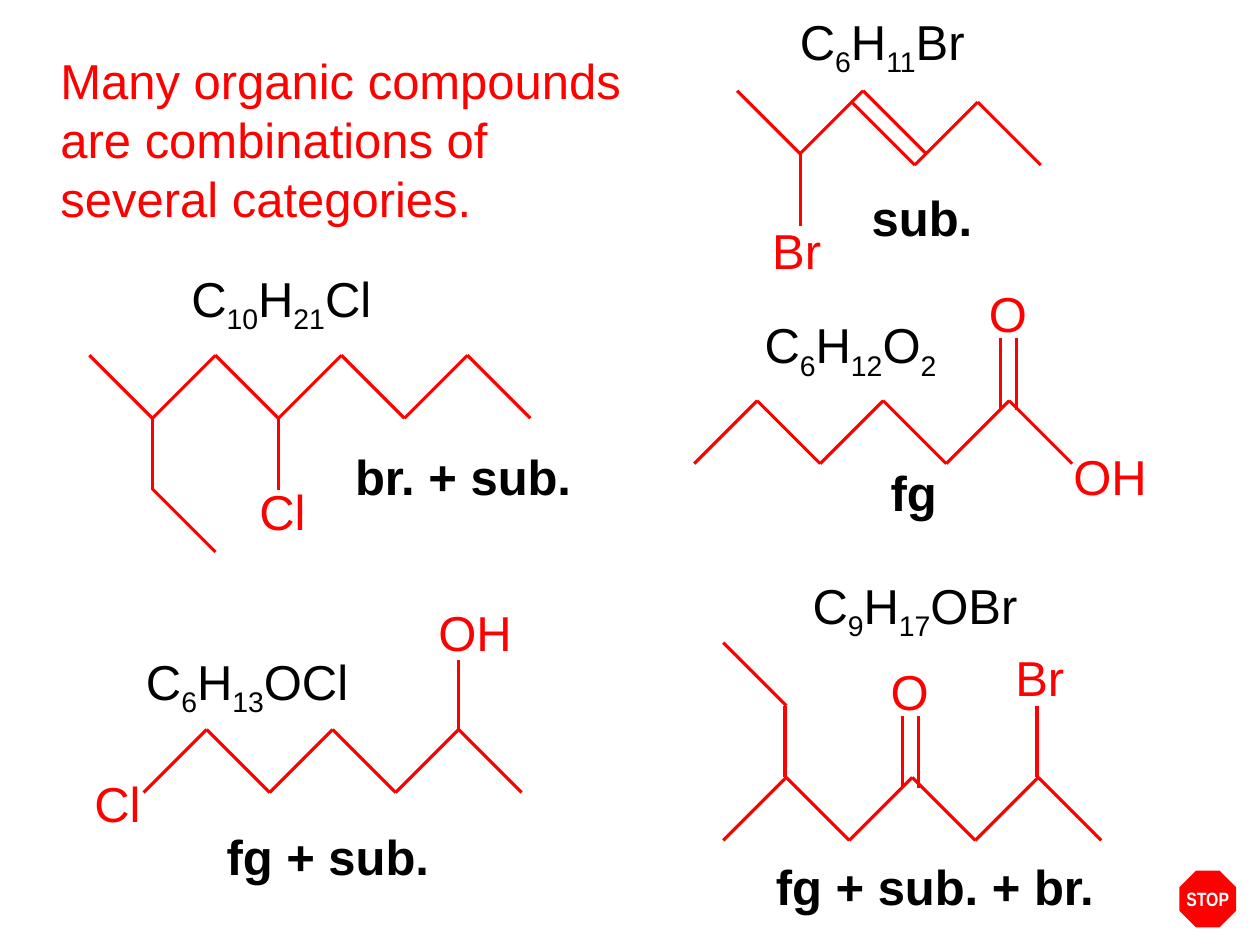
from itertools import groupby

from lxml import etree
from pptx import Presentation
from pptx.dml.color import RGBColor
from pptx.enum import shapes, text
from pptx.oxml.ns import qn
from pptx.util import Inches, Pt

RED, BLACK, WHITE = "FF0000", "000000", "FFFFFF"
STEP = 0.5
BOND = 0.57
LINE_HEIGHT = 0.57

# chains: start and zigzag (u/d = half an inch right and up/down)
# bonds: top of each vertical bond; atoms: left, top, width, symbol
MOLECULES = [
    {"chains": [(0.71, 2.82, "dududud"), (1.21, 3.88, "d")],
     "bonds": [(1.21, 3.32), (2.21, 3.32)],
     "atoms": [(1.96, 3.77, 0.57, "Cl")]},
    {"chains": [(1.14, 6.29, "ududud")],
     "bonds": [(3.64, 5.24)],
     "atoms": [(3.38, 4.73, 0.89, "OH"), (0.65, 6.09, 0.57, "Cl")]},
    {"chains": [(5.51, 3.68, "ududud")],
     "bonds": [(7.94, 2.68), (8.07, 2.68)],
     "atoms": [(7.75, 2.2, 0.5, "O"), (8.42, 3.49, 0.89, "OH")]},
    {"chains": [(5.74, 6.67, "ududud"), (5.74, 5.1, "d")],
     "bonds": [(7.16, 5.68), (7.29, 5.68), (6.23, 5.6), (8.23, 5.6)],
     "atoms": [(6.97, 5.2, 0.5, "O"), (7.96, 5.09, 0.59, "Br")]},
    {"chains": [(5.85, 0.72, "dud"), (6.76, 0.81, "dud")],
     "bonds": [(6.35, 1.22)],
     "atoms": [(6.03, 1.7, 0.59, "Br")]},
]
FORMULAS = [
    (6.25, 0.07, 1.7, "C6H11Br"), (1.42, 2.11, 1.83, "C10H21Cl"),
    (1.06, 5.15, 1.99, "C6H13OCl"), (5.97, 2.48, 1.77, "C6H12O2"),
    (6.35, 4.55, 2.01, "C9H17OBr"),
]
CATEGORIES = [
    (6.82, 1.44, 1, "sub."), (2.72, 3.49, 1.94, "br. + sub."),
    (1.7, 6.51, 1.81, "fg + sub."), (6.97, 3.62, 0.57, "fg"),
    (6.06, 6.75, 2.75, "fg + sub. + br."),
]


def rgb(value):
    """Turn a hex string into a colour."""
    return RGBColor.from_string(value)


def set_attributes(target, values):
    """Set every attribute named in a dict."""
    for name, value in values.items():
        setattr(target, name, value)


def format_frame(frame, anchor=text.MSO_ANCHOR.MIDDLE):
    """Keep the text on its own lines in a box that fits it."""
    set_attributes(frame, {"word_wrap": False, "vertical_anchor": anchor,
                           "auto_size": text.MSO_AUTO_SIZE.SHAPE_TO_FIT_TEXT})


def add_run(paragraph, wording, color, size=28, name="Arial", bold=False):
    """Add a formatted run to a paragraph."""
    run = paragraph.add_run()
    run.text = wording
    set_attributes(run.font, {"size": Pt(size), "name": name, "bold": bold})
    run.font.color.rgb = rgb(color)
    return run


def add_box(parent, left, top, width, height=LINE_HEIGHT,
            anchor=text.MSO_ANCHOR.MIDDLE):
    """Add a text box and return its first paragraph."""
    box = parent.shapes.add_textbox(*map(Inches, (left, top, width, height)))
    format_frame(box.text_frame, anchor)
    return box.text_frame.paragraphs[0]


def add_title(slide, lines):
    """Place the title at the upper left, one paragraph a line."""
    title = slide.shapes.title
    set_attributes(title, {"left": Inches(0.38), "top": Inches(0.35),
                           "width": Inches(4.66), "height": Inches(1.5)})
    frame = title.text_frame
    format_frame(frame)
    for index, line in enumerate(lines):
        paragraph = frame.add_paragraph() if index else frame.paragraphs[0]
        set_attributes(paragraph, {"alignment": text.PP_ALIGN.LEFT,
                                   "space_before": Pt(0), "line_spacing": 1.0})
        add_run(paragraph, line, RED)


def add_line(parent, *ends):
    """Draw one red bond line without a shadow."""
    connector = parent.shapes.add_connector(
        shapes.MSO_CONNECTOR.STRAIGHT, *map(Inches, ends))
    connector.line.color.rgb = rgb(RED)
    connector.line.width = Pt(1.75)
    etree.SubElement(connector._element.spPr, qn("a:effectLst"))


def add_chain(parent, x, y, moves):
    """Draw a zigzag carbon chain."""
    for move in moves:
        next_x, next_y = x + STEP, y + (STEP if move == "d" else -STEP)
        add_line(parent, x, y, next_x, next_y)
        x, y = next_x, next_y


def add_molecule(slide, molecule):
    """Draw a molecule as a group of chains, bonds and atoms."""
    group = slide.shapes.add_group_shape()
    for chain in molecule["chains"]:
        add_chain(group, *chain)
    for x, y in molecule["bonds"]:
        add_line(group, x, y, x, y + BOND)
    for left, top, width, symbol in molecule["atoms"]:
        add_run(add_box(group, left, top, width), symbol, RED)


def add_formula(slide, left, top, width, formula):
    """Add a formula with its digits as subscripts."""
    paragraph = add_box(slide, left, top, width)
    for is_digit, part in groupby(formula, str.isdigit):
        run = add_run(paragraph, "".join(part), BLACK)
        if is_digit:
            run._r.get_or_add_rPr().set("baseline", "-25000")


def add_stop_sign(slide):
    """Add the stop sign in the lower right corner."""
    group = slide.shapes.add_group_shape()
    sign = group.shapes.add_shape(shapes.MSO_SHAPE.OCTAGON,
                                  *map(Inches, (9.36, 6.91, 0.45, 0.45)))
    sign.shadow.inherit = False
    sign.fill.solid()
    sign.fill.fore_color.rgb = rgb(RED)
    sign.line.fill.background()
    paragraph = add_box(group, 9.31, 6.99, 0.55, 0.29, text.MSO_ANCHOR.TOP)
    paragraph.alignment = text.PP_ALIGN.CENTER
    add_run(paragraph, "STOP", WHITE, 11, "Arial Narrow", True)


def main():
    """Build the slide and save it."""
    presentation = Presentation()
    set_attributes(presentation, {"slide_width": Inches(10),
                                  "slide_height": Inches(7.5)})
    slide = presentation.slides.add_slide(presentation.slide_layouts[5])
    add_title(slide, ["Many organic compounds", "are combinations of",
                      "several categories."])
    for molecule in MOLECULES:
        add_molecule(slide, molecule)
    for formula in FORMULAS:
        add_formula(slide, *formula)
    for left, top, width, category in CATEGORIES:
        add_run(add_box(slide, left, top, width), category, BLACK, bold=True)
    add_stop_sign(slide)
    presentation.save("out.pptx")


if __name__ == "__main__":
    main()
